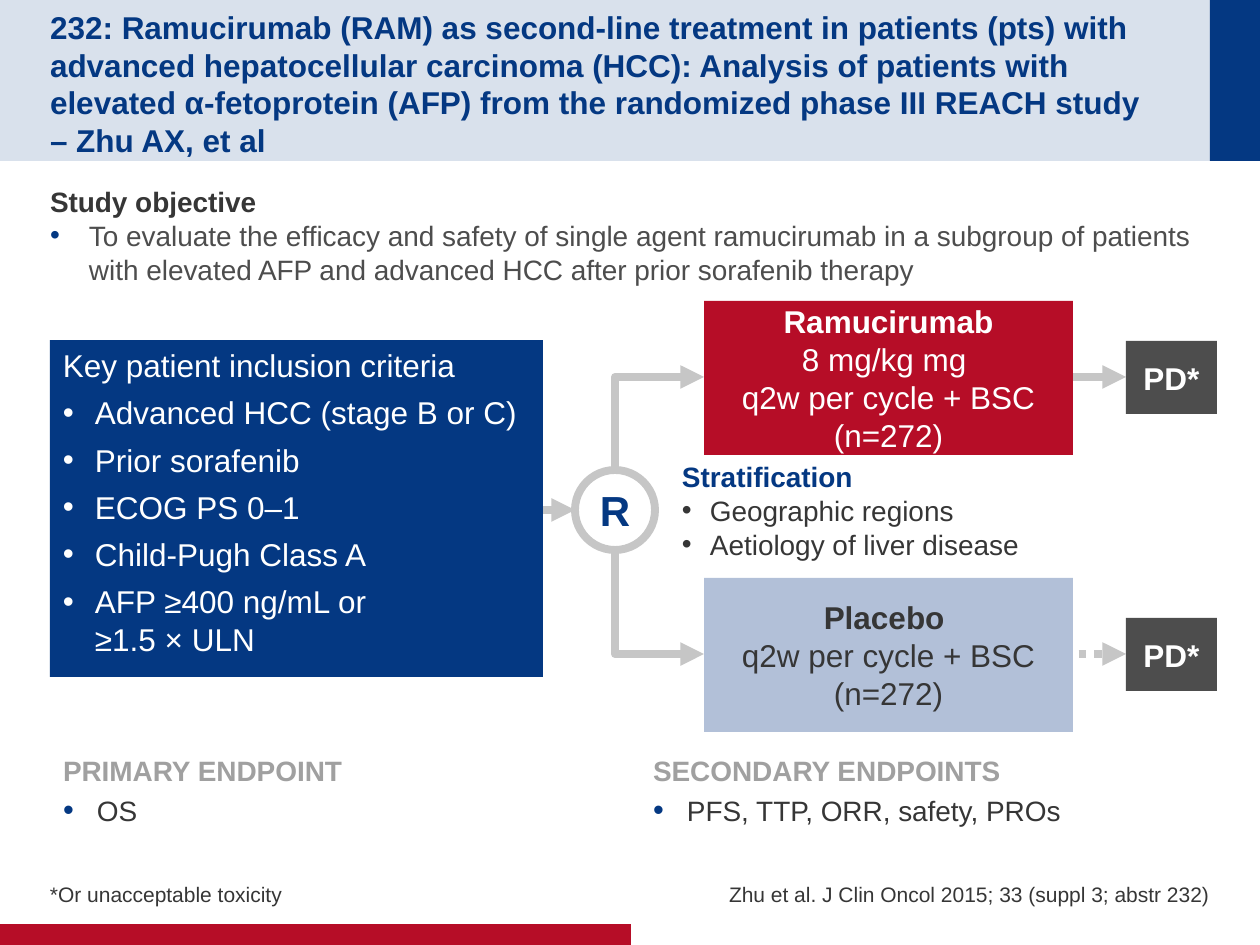
from copy import deepcopy
from dataclasses import dataclass
from typing import Any, NamedTuple

from pptx import Presentation
from pptx import util as u
from pptx.dml import color as c
from pptx.enum import dml, shapes, text
from pptx.oxml import ns, xmlchemy

PX = 914400 / 126


@dataclass(frozen=True)
class Theme:
    font: str = "Arial"
    navy: str = "043882"
    red: str = "B60D27"
    band: str = "D9E1EC"
    pale: str = "B2C0D8"
    arrow: str = "C6C6C6"
    heading: str = "A0A0A0"
    ink: str = "363636"
    dark: str = "4D4D4D"
    white: str = "FFFFFF"
    note_size: int = 12
    body_size: int = 16
    main_size: int = 18
    mark_size: int = 24
    arrow_width: float = 4.5


THEME = Theme()
LEFT, CENTER, RIGHT = text.PP_ALIGN.LEFT, text.PP_ALIGN.CENTER, text.PP_ALIGN.RIGHT
TOP, MIDDLE, BOTTOM = (text.MSO_ANCHOR.TOP, text.MSO_ANCHOR.MIDDLE,
                       text.MSO_ANCHOR.BOTTOM)


class Area(NamedTuple):
    left: int
    top: int
    width: int
    height: int


class Insets(NamedTuple):
    left: int = 13
    top: int = 6
    right: int = 13
    bottom: int = 6


class Span(NamedTuple):
    words: str
    color: str
    size: int = THEME.main_size
    bold: bool = False


class Para(NamedTuple):
    spans: list[Span]
    align: Any = LEFT
    after: float = 0
    indent: int = 0
    bullet: bool = False
    bullet_color: str = ""
    bullet_size: int = 100


class Arm(NamedTuple):
    top: int
    fill: str
    paras: list[Para]
    dash: Any = None


def emu(px: float) -> int:
    return round(px * PX)


def rgb(value: str) -> c.RGBColor:
    return c.RGBColor.from_string(value)


def assign(target: Any, values: dict[str, Any]) -> None:
    for name, value in values.items():
        setattr(target, name, value)


def add_node(parent: Any, tag: str, **values: str) -> Any:
    node = xmlchemy.OxmlElement(tag)
    for name, value in values.items():
        node.set(name, value)
    parent.append(node)
    return node


def format_bullet(para: Any, model: Para) -> None:
    props = para._p.get_or_add_pPr()
    props.set("marL", str(emu(model.indent)))
    props.set("indent", str(-emu(model.indent)))
    if not model.bullet:
        add_node(props, "a:buNone")
        return
    if model.bullet_color:
        add_node(add_node(props, "a:buClr"), "a:srgbClr", val=model.bullet_color)
    add_node(props, "a:buSzPct", val=str(model.bullet_size * 1000))
    add_node(props, "a:buFont", typeface=THEME.font)
    add_node(props, "a:buChar", char="•")


def add_span(para: Any, model: Span) -> None:
    for number, line in enumerate(model.words.split("\n")):
        if number:
            para.add_line_break()
            para._p[-1].append(deepcopy(span._r.rPr))
        span = para.add_run()
        span.text = line
        assign(span.font, {"name": THEME.font, "size": u.Pt(model.size),
                           "bold": model.bold})
        span.font.color.rgb = rgb(model.color)


def write(box: Any, paras: list[Para], insets: Insets = Insets(),
          anchor: Any = TOP, wrap: bool = True) -> None:
    frame = box.text_frame
    assign(frame, {"word_wrap": wrap, "auto_size": text.MSO_AUTO_SIZE.NONE,
                   "vertical_anchor": anchor})
    assign(frame, {f"margin_{side}": emu(px)
                   for side, px in insets._asdict().items()})
    for number, model in enumerate(paras):
        para = frame.add_paragraph() if number else frame.paragraphs[0]
        assign(para, {"alignment": model.align, "space_before": u.Pt(0),
                      "space_after": u.Pt(model.after)})
        format_bullet(para, model)
        for span in model.spans:
            add_span(para, span)


def place(box: Any, area: Area) -> Any:
    assign(box, {name: emu(px) for name, px in area._asdict().items()})
    return box


def add_box(page: Any, area: Area, fill: str) -> Any:
    box = page.shapes.add_shape(shapes.MSO_SHAPE.RECTANGLE, *map(emu, area))
    box.shadow.inherit = False
    box.fill.solid()
    box.fill.fore_color.rgb = rgb(fill)
    box.line.fill.background()
    return box


def add_arrow(page: Any, start: tuple[float, float], end: tuple[float, float],
              kind: Any = shapes.MSO_CONNECTOR.STRAIGHT, dash: Any = None) -> Any:
    arrow = page.shapes.add_connector(kind, *map(emu, start + end))
    arrow.line.color.rgb = rgb(THEME.arrow)
    arrow.line.width = u.Pt(THEME.arrow_width)
    if dash:
        arrow.line.dash_style = dash
    add_node(arrow.line._get_or_add_ln(), "a:tailEnd", type="triangle")
    add_node(arrow._element.spPr, "a:effectLst")
    return arrow


def add_bend(page: Any, start: tuple[int, int], end: tuple[int, int]) -> None:
    mid_x, mid_y = (start[0] + end[0]) / 2, (start[1] + end[1]) / 2
    half_run, half_rise = (end[0] - start[0]) / 2, abs(end[1] - start[1]) / 2
    upward = end[1] < start[1]
    shift = half_run if upward else -half_run
    bend = add_arrow(page, (mid_x + half_rise, mid_y + shift),
                     (mid_x - half_rise, mid_y - shift), shapes.MSO_CONNECTOR.ELBOW)
    props = bend._element.spPr
    props.find(ns.qn("a:xfrm")).set("rot", str((90 if upward else 270) * 60000))
    props.find(ns.qn("a:prstGeom")).set("prst", "bentConnector2")


def add_arm(page: Any, arm: Arm) -> None:
    middle = arm.top + 76
    add_bend(page, (615, 470 if middle < 510 else 550), (704, middle))
    add_arrow(page, (1047, middle), (1126, middle), dash=arm.dash)
    tight = Insets(top=0, bottom=0)
    write(add_box(page, Area(704, arm.top, 369, 154), arm.fill), arm.paras, tight, MIDDLE)
    outcome = Para([Span("PD*", THEME.white, bold=True)], CENTER)
    write(add_box(page, Area(1126, arm.top + 40, 91, 73), THEME.dark),
          [outcome], tight, MIDDLE)


def main() -> None:
    deck = Presentation()
    assign(deck, {"slide_width": emu(1260), "slide_height": emu(945)})
    page = deck.slides.add_slide(deck.slide_layouts[4])
    title, objective, primary, secondary, strata = page.placeholders
    size = THEME.body_size

    for depth, (area, fill) in enumerate([(Area(0, 0, 1210, 161), THEME.band),
                                          (Area(1210, 0, 50, 161), THEME.navy),
                                          (Area(0, 924, 631, 21), THEME.red)]):
        bar = add_box(page, area, fill)._element
        bar.getparent().insert(2 + depth, bar)

    write(place(title, Area(50, 25, 1135, 111)), [Para([Span(
        "232: Ramucirumab (RAM) as second-line treatment in patients (pts) with advanced "
        "hepatocellular carcinoma (HCC): Analysis of patients with elevated α-fetoprotein "
        "(AFP) from the randomized phase III REACH study \n– Zhu AX, et al",
        THEME.navy, bold=True)])], Insets(0, 6, 0, 0), MIDDLE)
    write(place(objective, Area(50, 179, 1158, 115)), [
        Para([Span("Study objective", THEME.ink, size, True)]),
        Para([Span("To evaluate the efficacy and safety of single agent ramucirumab in a "
                   "subgroup of patients with elevated AFP and advanced HCC after prior "
                   "sorafenib therapy", THEME.dark, size)],
             indent=39, bullet=True, bullet_color=THEME.navy)], Insets(left=0))
    write(place(strata, Area(669, 454, 388, 123)), [
        Para([Span("Stratification", THEME.navy, size, True)])] + [
        Para([Span(words, THEME.ink, size)], indent=28, bullet=True)
        for words in ("Geographic regions", "Aetiology of liver disease")])

    for box, left, heading, words in (
            (primary, 50, "PRIMARY ENDPOINT", "OS"),
            (secondary, 640, "SECONDARY ENDPOINTS", "PFS, TTP, ORR, safety, PROs")):
        write(place(box, Area(left, 747, 570, 113)), [
            Para([Span(heading, THEME.heading, size, True)], after=4),
            Para([Span(words, THEME.ink, size)], after=4, indent=34, bullet=True,
                 bullet_color=THEME.navy, bullet_size=110)])
    for left, align, words in (
            (50, LEFT, "*Or unacceptable toxicity"),
            (640, RIGHT, "Zhu et al. J Clin Oncol 2015; 33 (suppl 3; abstr 232)")):
        note = page.shapes.add_textbox(*map(emu, Area(left, 840, 570, 67)))
        write(note, [Para([Span(words, THEME.ink, THEME.note_size)], align, 4)],
              Insets(0, 0, 0, 0), BOTTOM)

    add_arrow(page, (539, 510), (575, 510))
    criteria = ("Advanced HCC (stage B or C)", "Prior sorafenib", "ECOG PS 0–1",
                "Child-Pugh Class A", "AFP ≥400 ng/mL or \n≥1.5 × ULN")
    write(add_box(page, Area(50, 340, 493, 337), THEME.navy), [
        Para([Span("Key patient inclusion criteria", THEME.white)], after=5.4)] + [
        Para([Span(words, THEME.white)], after=5.4, indent=32, bullet=True)
        for words in criteria])

    add_arm(page, Arm(301, THEME.red, [
        Para([Span("Ramucirumab", THEME.white, bold=True)], CENTER),
        Para([Span("8 mg/kg mg \nq2w per cycle + BSC", THEME.white)], CENTER),
        Para([Span("(n=272)", THEME.white)], CENTER)]))
    add_arm(page, Arm(578, THEME.pale, [
        Para([Span("Placebo \n", THEME.ink, bold=True),
              Span("q2w per cycle + BSC", THEME.ink)], CENTER),
        Para([Span("(n=272)", THEME.ink)], CENTER)], dml.MSO_LINE.ROUND_DOT))

    circle = page.shapes.add_shape(shapes.MSO_SHAPE.OVAL, *map(emu, Area(575, 470, 80, 80)))
    circle.shadow.inherit = False
    circle.fill.background()
    circle.line.color.rgb = rgb(THEME.arrow)
    circle.line.width = u.Pt(THEME.arrow_width)
    write(circle, [Para([Span("R", THEME.navy, THEME.mark_size, True)], CENTER)],
          anchor=MIDDLE, wrap=False)
    deck.save("out.pptx")


if __name__ == "__main__":
    main()
